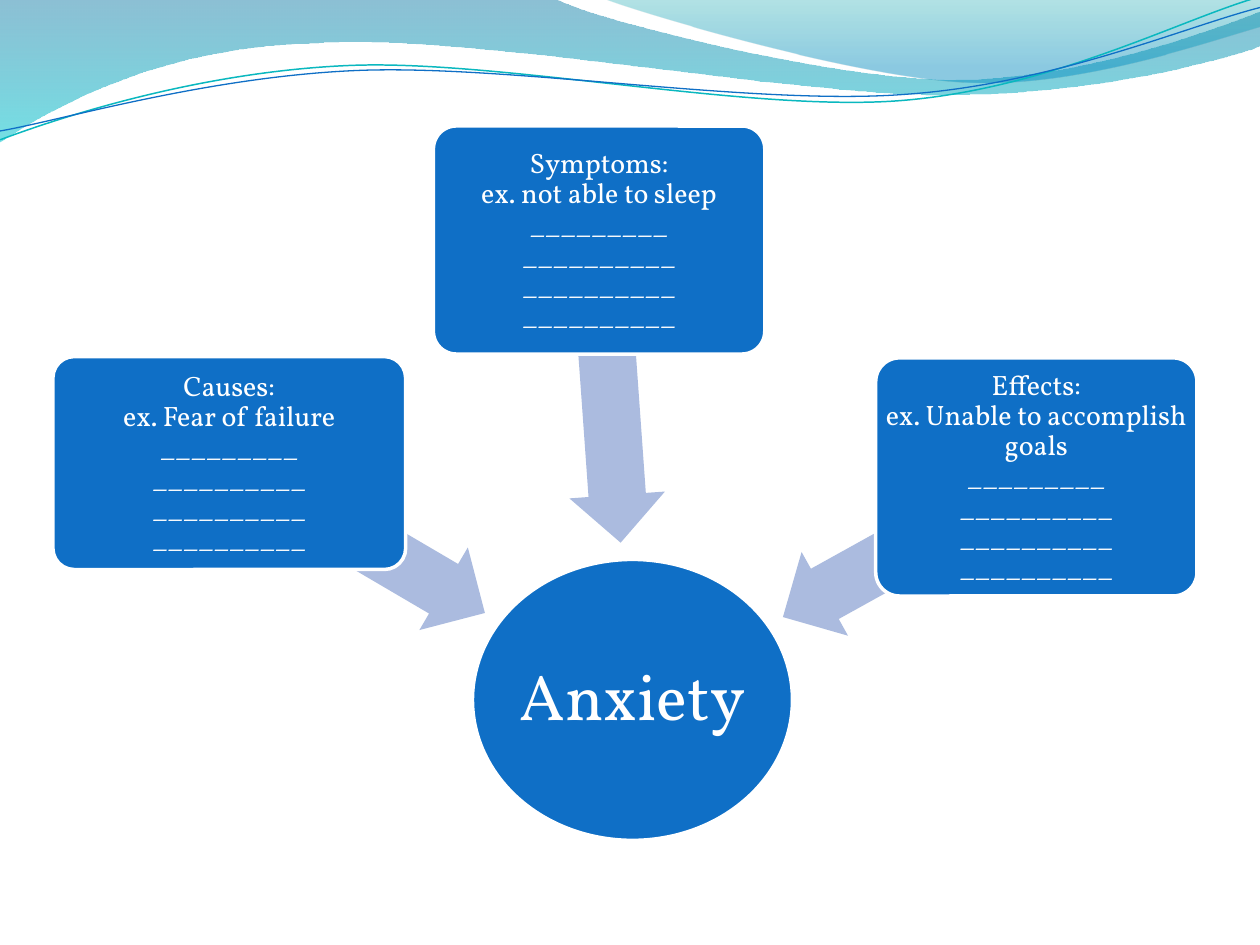
from copy import deepcopy
from dataclasses import dataclass
from math import cos, radians, sin

from lxml.etree import SubElement
from pptx import Presentation
from pptx.dml.color import RGBColor
from pptx.enum.shapes import MSO_SHAPE
from pptx.enum.text import MSO_ANCHOR, PP_ALIGN
from pptx.oxml.ns import qn
from pptx.util import Inches, Pt


@dataclass(frozen=True)
class Theme:
    font: str = "Vollkorn"
    blue: str = "0F6FC6"
    teal: str = "0AB8BF"
    arrow: str = "ABBBDF"
    white: str = "FFFFFF"
    topic_size: int = 37
    card_size: int = 16
    outline: int = 2
    broad_wave: tuple = ((0, "0074A1", 45), (1, "00C6CF", 55))
    right_wave: tuple = ((0, "00A1A9", 30), (0.8, "008BBF", 45))


THEME = Theme()
FRAME_FORMAT = {
    "vertical_anchor": MSO_ANCHOR.MIDDLE,
    "margin_left": Inches(0.02),
    "margin_right": Inches(0.02),
    "margin_top": Inches(0.03),
    "margin_bottom": Inches(0.03),
}
PARAGRAPH_FORMAT = {"alignment": PP_ALIGN.CENTER, "line_spacing": 0.9}
BLANKS = ["_" * count for count in (9, 10, 10, 10)]

BROAD_WAVE = [
    (0, 0), (4.4, -0.01),
    (4.76, 0.17, 6.64, 0.63, 7.58, 0.63), (8.53, 0.63, 9.58, 0.26, 10, 0.09),
    (10.01, 0.36),
    (9.83, 0.44, 8.7, 0.76, 7.46, 0.75), (6.22, 0.75, 3.82, 0.28, 2.57, 0.34),
    (1.29, 0.36, 0.46, 0.83, -0.01, 1.13),
]
RIGHT_WAVE = [
    (4.79, -0.01),
    (5.09, 0.11, 6.82, 0.62, 7.69, 0.65), (8.56, 0.69, 9.61, 0.32, 10, 0.21),
    (10, 0),
]
TEAL_STRAND = [
    (0, 1.11),
    (0.48, 0.93, 1.58, 0.57, 2.77, 0.52), (3.95, 0.47, 5.93, 0.89, 7.13, 0.8),
    (8.33, 0.71, 9.38, 0.15, 9.98, -0.02),
]
BLUE_STRAND = [
    (0, 1.04),
    (0.47, 0.96, 1.64, 0.61, 2.83, 0.56), (4.03, 0.51, 5.97, 0.84, 7.17, 0.75),
    (8.36, 0.67, 9.41, 0.21, 10, 0.06),
]
STRAND_ROTATION = 357.3


def set_format(target, values):
    for name, value in values.items():
        setattr(target, name, value)


def color(value):
    return RGBColor.from_string(value)


def turn(x, y, degrees, center):
    c, s = cos(radians(degrees)), sin(radians(degrees))
    cx, cy = center
    return cx + (x - cx) * c - (y - cy) * s, cy + (x - cx) * s + (y - cy) * c


def add_outline(slide, segments, close, degrees=0, center=(0, 0)):
    curves = [
        [tuple(map(Inches, turn(x, y, degrees, center)))
         for x, y in zip(segment[::2], segment[1::2])]
        for segment in segments
    ]
    builder = slide.shapes.build_freeform(*curves[0][0], scale=1)
    builder.add_line_segments([curve[-1] for curve in curves[1:]], close=close)
    outline = builder.convert_to_shape()
    outline.shadow.inherit = False
    edges = list(outline._element.spPr.iter(qn("a:lnTo")))
    for edge, curve in zip(edges, curves[1:]):
        if len(curve) == 3:
            bend = edge.makeelement(qn("a:cubicBezTo"))
            for x, y in curve:
                SubElement(bend, qn("a:pt"), x=str(x - outline.left),
                           y=str(y - outline.top))
            edge.getparent().replace(edge, bend)
    return outline


def add_wave(slide, segments, stops):
    wave = add_outline(slide, segments, True)
    wave.line.fill.background()
    wave.fill.gradient()
    wave.fill.gradient_angle = 270
    for stop, (position, tint, _) in zip(wave.fill.gradient_stops, stops):
        stop.position = position
        stop.color.rgb = color(tint)
    tints = wave._element.spPr.iter(qn("a:srgbClr"))
    for tint, (_, _, opacity) in zip(tints, stops):
        SubElement(tint, qn("a:alpha"), val=str(opacity * 1000))


def add_strand(slide, segments, center, tint, width):
    strand = add_outline(slide, segments, False, 360 - STRAND_ROTATION, center)
    strand.rotation = STRAND_ROTATION
    strand.fill.background()
    strand.line.color.rgb = color(tint)
    strand.line.width = Pt(width)


def add_solid(slide, kind, box, fill):
    solid = slide.shapes.add_shape(kind, *map(Inches, box))
    solid.shadow.inherit = False
    solid.fill.solid()
    solid.fill.fore_color.rgb = color(fill)
    return solid


def add_arrow(slide, box, rotation):
    arrow = add_solid(slide, MSO_SHAPE.LEFT_ARROW, box, THEME.arrow)
    arrow.line.fill.background()
    arrow.adjustments[0] = 0.6
    arrow.adjustments[1] = 0.5
    arrow.rotation = rotation


def add_bubble(slide, kind, box, lines, size, wrap):
    bubble = add_solid(slide, kind, box, THEME.blue)
    bubble.line.color.rgb = color(THEME.white)
    bubble.line.width = Pt(THEME.outline)
    frame = bubble.text_frame
    set_format(frame, FRAME_FORMAT | {"word_wrap": wrap})
    paragraph = frame.paragraphs[0]
    paragraph.text = "\v".join(lines)
    set_format(paragraph, PARAGRAPH_FORMAT)
    for run in paragraph.runs:
        set_format(run.font, {"name": THEME.font, "size": Pt(size)})
        run.font.color.rgb = color(THEME.white)
    run_format = paragraph.runs[0]._r.rPr
    for line_break in paragraph._p.findall(qn("a:br")):
        line_break.insert(0, deepcopy(run_format))
    return bubble


def add_card(slide, box, heading, example):
    card = add_bubble(slide, MSO_SHAPE.ROUNDED_RECTANGLE, box,
                      [heading, example, *BLANKS], THEME.card_size, True)
    card.adjustments[0] = 0.1


def main():
    presentation = Presentation()
    presentation.slide_width = Inches(10)
    presentation.slide_height = Inches(7.5)
    slide = presentation.slides.add_slide(presentation.slide_layouts[6])

    add_wave(slide, BROAD_WAVE, THEME.broad_wave)
    add_wave(slide, RIGHT_WAVE, THEME.right_wave)
    add_strand(slide, TEAL_STRAND, (4.99, 0.58), THEME.teal, 0.85)
    add_strand(slide, BLUE_STRAND, (5, 0.59), THEME.blue, 0.75)

    add_bubble(slide, MSO_SHAPE.OVAL, (3.75, 4.44, 2.54, 2.23),
               ["Anxiety"], THEME.topic_size, False)
    branches = [
        ((1.66, 3.89, 2.35, 0.76), 210.4, (0.42, 2.83, 2.8, 1.69),
         "Causes:", "ex. Fear of failure"),
        ((3.64, 2.73, 2.4, 0.76), 265.9, (3.44, 1, 2.63, 1.81),
         "Symptoms:", "ex. not able to sleep"),
        ((6.07, 3.96, 2.3, 0.76), 331, (6.95, 2.84, 2.55, 1.89),
         "Effects:", "ex. Unable to accomplish goals"),
    ]
    for arrow_box, rotation, card_box, heading, example in branches:
        add_arrow(slide, arrow_box, rotation)
        add_card(slide, card_box, heading, example)

    presentation.save("out.pptx")


if __name__ == "__main__":
    main()
